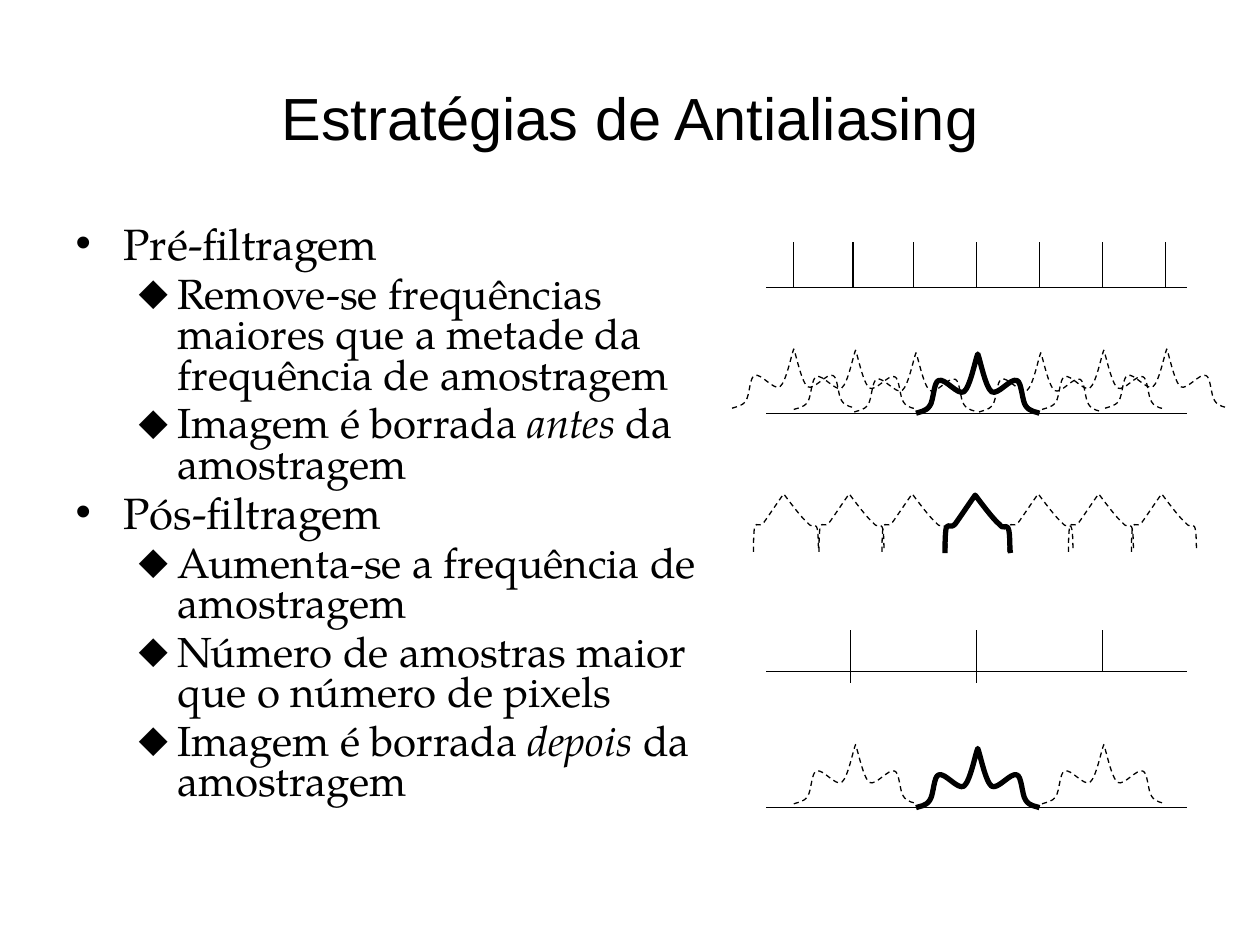
"""Build the slide on antialiasing strategies, with its sampling diagrams."""
from dataclasses import dataclass

import pptx
import pptx.dml.color
import pptx.enum.dml
import pptx.enum.shapes
import pptx.enum.text
import pptx.oxml.ns
import pptx.slide
import pptx.util
from lxml import etree

Inches = pptx.util.Inches
Pt = pptx.util.Pt
qn = pptx.oxml.ns.qn
Point = tuple[float, float]
BLACK = "000000"
BODY_FONT = "TeX Gyre Pagella"


@dataclass
class ListItem:
    """A list entry with an optional italic word between two plain parts."""
    level: int
    before: str
    italic: str = ""
    after: str = ""


@dataclass
class ListStyle:
    """The bullet, text size and indents of one list level."""
    bullet: str
    size: int
    margin: float
    hanging: float


@dataclass
class Comb:
    """A frequency axis with sampling impulses, each x, top and bottom."""
    axis_y: float
    impulses: list[tuple[float, float, float]]


@dataclass
class Spectrum:
    """One lobe of a spectrum, placed by its peak."""
    x: float
    y: float
    original: bool = False


STYLES = [ListStyle("•", 25, 0.38, 0.38), ListStyle("⬥", 24, 0.81, 0.31)]
ITEMS = [
    ListItem(0, "Pré-filtragem"),
    ListItem(1, "Remove-se frequências maiores que a metade da frequência de amostragem"),
    ListItem(1, "Imagem é borrada ", "antes", " da amostragem"),
    ListItem(0, "Pós-filtragem"),
    ListItem(1, "Aumenta-se a frequência de amostragem"),
    ListItem(1, "Número de amostras maior que o número de pixels"),
    ListItem(1, "Imagem é borrada ", "depois ", "da amostragem"),
]
COMBS = [
    Comb(2.28, [(x, 1.92, 2.28) for x in (6.3, 6.77, 7.25, 7.75, 8.25, 8.75, 9.25)]),
    Comb(3.28, []),
    Comb(5.33, [(6.75, 5, 5.42), (7.75, 5, 5.42), (8.75, 5, 5.33)]),
    Comb(6.41, []),
]
WIDE_HALF: list[Point] = [
    (0.02, 0.05), (0.06, 0.26), (0.11, 0.3),
    (0.16, 0.33), (0.26, 0.19), (0.31, 0.21),
    (0.35, 0.22), (0.35, 0.37), (0.38, 0.41),
    (0.41, 0.46), (0.47, 0.46), (0.49, 0.47),
]
LIMITED_RIGHT: list[Point] = [
    (0.03, 0.04), (0.14, 0.19), (0.19, 0.23),
    (0.23, 0.28), (0.24, 0.23), (0.26, 0.26),
    (0.28, 0.3), (0.27, 0.42), (0.28, 0.46),
]
LIMITED_LEFT: list[Point] = [
    (0.03, 0.04), (0.13, 0.19), (0.16, 0.23),
    (0.2, 0.27), (0.21, 0.22), (0.23, 0.26),
    (0.24, 0.3), (0.24, 0.42), (0.24, 0.46),
]
WIDE_SPECTRA = [
    Spectrum(7.76, 2.81, True),
    Spectrum(8.26, 2.8), Spectrum(8.76, 2.78), Spectrum(9.26, 2.77),
    Spectrum(7.27, 2.8), Spectrum(6.79, 2.78), Spectrum(6.3, 2.77),
    Spectrum(7.76, 5.94, True), Spectrum(8.76, 5.91), Spectrum(6.79, 5.91),
]
LIMITED_SPECTRA = [Spectrum(7.74, 3.93, True)] + [
    Spectrum(x, 3.92) for x in (6.22, 6.74, 7.24, 8.24, 8.72, 9.22)
]


def color(value: str) -> pptx.dml.color.RGBColor:
    """Turn a hex string into a colour."""
    return pptx.dml.color.RGBColor.from_string(value)


def format_font(font, name: str, size: float) -> None:
    """Set the face, size and colour of a font."""
    font.name, font.size = name, Pt(size)
    font.color.rgb = color(BLACK)


def place(shape, left: float, top: float, width: float, height: float) -> None:
    """Move and size a shape, in inches."""
    shape.left, shape.top = Inches(left), Inches(top)
    shape.width, shape.height = Inches(width), Inches(height)


def add_item(paragraph, item: ListItem) -> None:
    """Fill a paragraph with a bulleted list entry."""
    style = STYLES[item.level]
    paragraph.level = item.level
    properties = paragraph._p.get_or_add_pPr()
    properties.set("marL", str(Inches(style.margin)))
    properties.set("indent", str(-Inches(style.hanging)))
    bullet = etree.SubElement(properties, qn("a:buChar"))
    bullet.set("char", style.bullet)
    paragraph.line_spacing = 0.8
    for text in filter(None, (item.before, item.italic, item.after)):
        run = paragraph.add_run()
        run.text = text
        format_font(run.font, BODY_FONT, style.size)
        run.font.italic = text == item.italic


def add_line(slide: pptx.slide.Slide, start: Point, end: Point) -> None:
    """Draw a thin straight line."""
    connector = slide.shapes.add_connector(
        pptx.enum.shapes.MSO_CONNECTOR.STRAIGHT, *map(Inches, start + end))
    connector.line.color.rgb = color(BLACK)
    connector.line.width = Pt(0.75)
    etree.SubElement(connector._element.spPr, qn("a:effectLst"))


def add_comb(slide: pptx.slide.Slide, comb: Comb) -> None:
    """Draw an axis and its impulses."""
    add_line(slide, (6.08, comb.axis_y), (9.42, comb.axis_y))
    for x, top, bottom in comb.impulses:
        add_line(slide, (x, bottom), (x, top))


def curve_segments(shape) -> None:
    """Join every three straight segments of a freeform into a cubic curve."""
    for outline in shape._element.iter(qn("a:path")):
        segments = outline.findall(qn("a:lnTo"))
        for first, second, third in zip(segments[::3], segments[1::3], segments[2::3]):
            curve = etree.Element(qn("a:cubicBezTo"))
            outline.replace(first, curve)
            for segment in (first, second, third):
                curve.append(segment[0])
            outline.remove(second)
            outline.remove(third)


def add_spectrum(slide: pptx.slide.Slide, spectrum: Spectrum,
                 left: list[Point], right: list[Point]) -> None:
    """Draw a lobe, solid if original and dashed if a replica."""
    offsets = [(-dx, dy) for dx, dy in reversed(left)] + [(0, 0)] + right
    start, *points = [(Inches(spectrum.x + dx), Inches(spectrum.y + dy)) for dx, dy in offsets]
    builder = slide.shapes.build_freeform(*start)
    builder.add_line_segments(points, close=False)
    shape = builder.convert_to_shape()
    curve_segments(shape)
    shape.shadow.inherit = False
    shape.fill.background()
    shape.line.color.rgb = color(BLACK)
    shape.line.width = Pt(3 if spectrum.original else 0.75)
    if not spectrum.original:
        shape.line.dash_style = pptx.enum.dml.MSO_LINE.DASH


def main() -> None:
    """Build and save the presentation."""
    presentation = pptx.Presentation()
    presentation.slide_width, presentation.slide_height = Inches(10), Inches(7.5)
    slide = presentation.slides.add_slide(presentation.slide_layouts[1])

    title, body = slide.placeholders
    place(title, 0.5, 0.3, 9, 1.25)
    title.text_frame.text = "Estratégias de Antialiasing"
    format_font(title.text_frame.paragraphs[0].runs[0].font, "Arial", 34)

    place(body, 0.5, 1.75, 5.29, 4.95)
    frame = body.text_frame
    frame.auto_size = pptx.enum.text.MSO_AUTO_SIZE.NONE
    for index, item in enumerate(ITEMS):
        add_item(frame.add_paragraph() if index else frame.paragraphs[0], item)
    frame.paragraphs[0].space_before = Pt(0)

    for comb in COMBS:
        add_comb(slide, comb)
    for spectrum in WIDE_SPECTRA:
        add_spectrum(slide, spectrum, WIDE_HALF, WIDE_HALF)
    for spectrum in LIMITED_SPECTRA:
        add_spectrum(slide, spectrum, LIMITED_LEFT, LIMITED_RIGHT)
    presentation.save("out.pptx")


if __name__ == "__main__":
    main()
